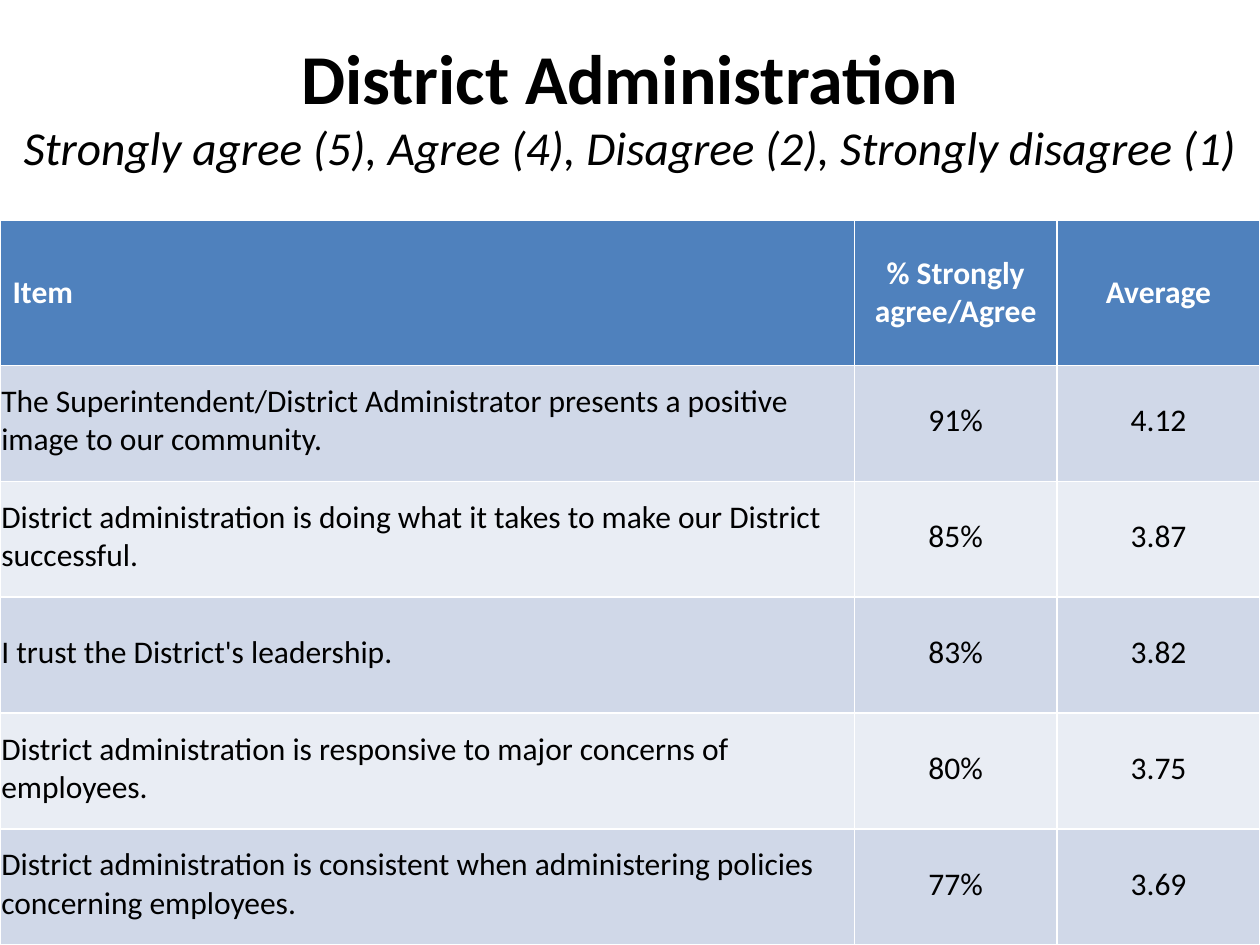
from lxml.etree import SubElement
from pptx import Presentation
from pptx.dml.color import RGBColor
from pptx.enum.text import MSO_ANCHOR, MSO_AUTO_SIZE, PP_ALIGN
from pptx.oxml.ns import qn
from pptx.util import Pt

COLORS = {
    "header": "4F81BD",
    "odd_row": "D0D8E8",
    "even_row": "E9EDF4",
    "text": "000000",
    "header_text": "FFFFFF",
}
FONT = "Calibri"
SLIDE_WIDTH, SLIDE_HEIGHT = 720, 540
TITLE_BOX = (0, 0, SLIDE_WIDTH, 120)
TABLE_BOX = (0, 126, SLIDE_WIDTH, SLIDE_HEIGHT - 126)
HEADER_HEIGHT = 82.8
NUMBER_WIDTH = 115.92

TITLE = "District Administration"
SCALE = "Strongly agree (5), Agree (4), Disagree (2), Strongly disagree (1)"
ROWS = [
    ("Item", "% Strongly agree/Agree", "Average"),
    ("The Superintendent/District Administrator presents a positive image to our community.",
     "91%", "4.12"),
    ("District administration is doing what it takes to make our District successful.",
     "85%", "3.87"),
    ("I trust the District's leadership.", "83%", "3.82"),
    ("District administration is responsive to major concerns of employees.", "80%", "3.75"),
    ("District administration is consistent when administering policies concerning employees.",
     "77%", "3.69"),
]


def format_run(run, size, color, bold=False, italic=False):
    font = run.font
    font.name, font.size = FONT, Pt(size)
    font.bold, font.italic = bold, italic
    font.color.rgb = RGBColor.from_string(COLORS[color])


def place_title(slide, box):
    title = slide.shapes.title
    title.left, title.top, title.width, title.height = map(Pt, box)
    frame = title.text_frame
    frame.auto_size = MSO_AUTO_SIZE.NONE
    frame.vertical_anchor = MSO_ANCHOR.MIDDLE
    paragraph = frame.paragraphs[0]
    paragraph.text = f"{TITLE}\v{SCALE}"
    paragraph.alignment = PP_ALIGN.CENTER
    heading, scale = paragraph.runs
    format_run(heading, 40, "text", bold=True)
    format_run(scale, 27, "text", italic=True)
    # The line break needs the heading's size to keep the first line's height.
    line_break = paragraph._p.find(qn("a:br"))
    SubElement(line_break, qn("a:rPr")).set("sz", "4000")


def fill_cell(cell, text, row, column):
    is_header = row == 0
    if is_header:
        fill = "header"
    else:
        fill = "odd_row" if row % 2 else "even_row"
        cell.margin_left = cell.margin_top = cell.margin_right = Pt(0.75)
    cell.fill.solid()
    cell.fill.fore_color.rgb = RGBColor.from_string(COLORS[fill])
    cell.vertical_anchor = MSO_ANCHOR.MIDDLE
    paragraph = cell.text_frame.paragraphs[0]
    paragraph.text = text
    paragraph.alignment = PP_ALIGN.CENTER if column else PP_ALIGN.LEFT
    format_run(paragraph.runs[0], 18, "header_text" if is_header else "text", bold=is_header)


def place_table(slide, box):
    """Add the ratings table; its default style draws the white cell borders."""
    width, height = box[2:]
    table = slide.shapes.add_table(len(ROWS), len(ROWS[0]), *map(Pt, box)).table
    widths = (width - 2 * NUMBER_WIDTH, NUMBER_WIDTH, NUMBER_WIDTH)
    for column, column_width in zip(table.columns, widths):
        column.width = Pt(column_width)
    body_height = (height - HEADER_HEIGHT) / (len(ROWS) - 1)
    for row, texts in enumerate(ROWS):
        table.rows[row].height = Pt(body_height if row else HEADER_HEIGHT)
        for column, text in enumerate(texts):
            fill_cell(table.cell(row, column), text, row, column)


def main():
    presentation = Presentation()
    presentation.slide_width, presentation.slide_height = Pt(SLIDE_WIDTH), Pt(SLIDE_HEIGHT)
    title_only = presentation.slide_layouts[5]
    slide = presentation.slides.add_slide(title_only)
    place_title(slide, TITLE_BOX)
    place_table(slide, TABLE_BOX)
    presentation.save("out.pptx")


if __name__ == "__main__":
    main()
